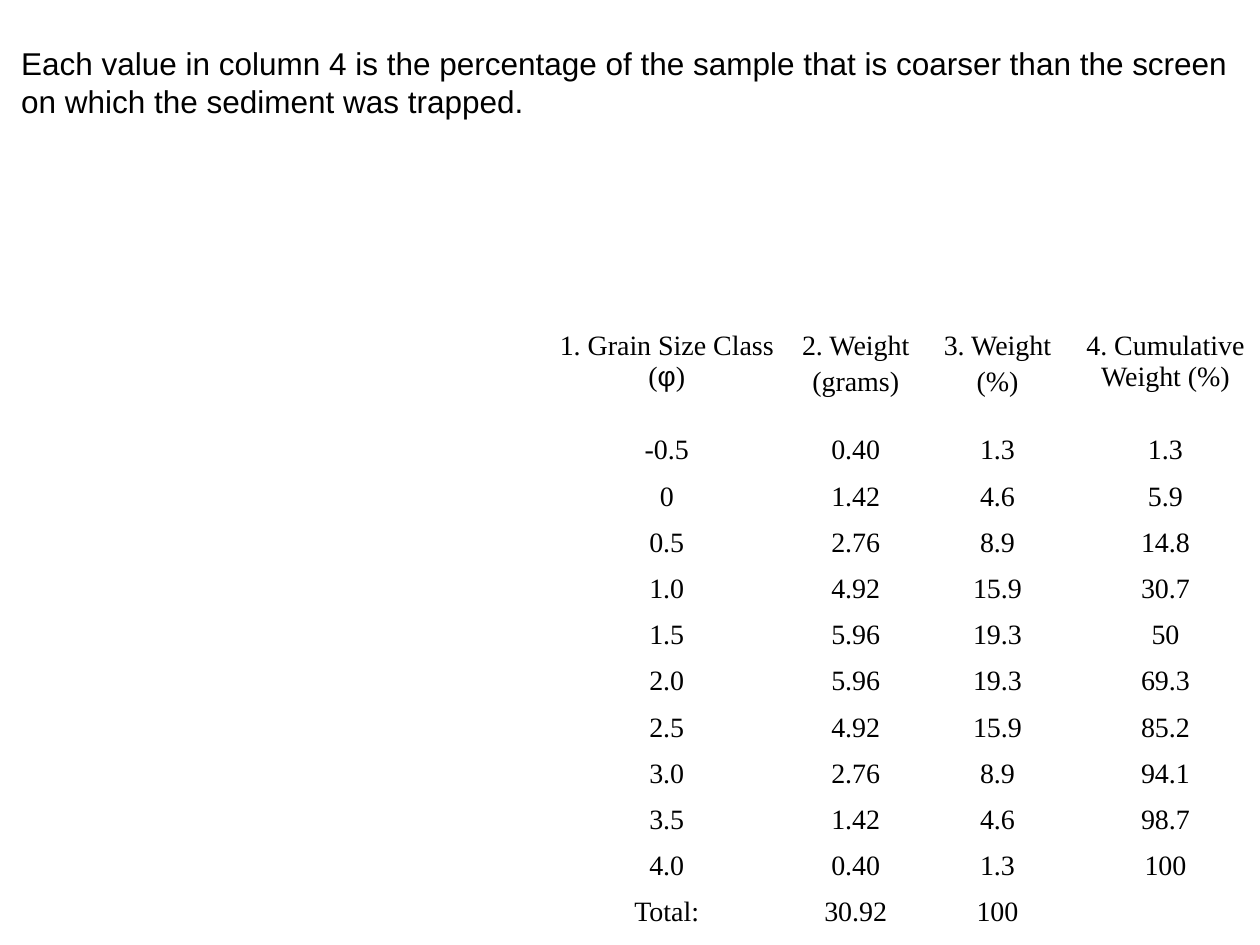
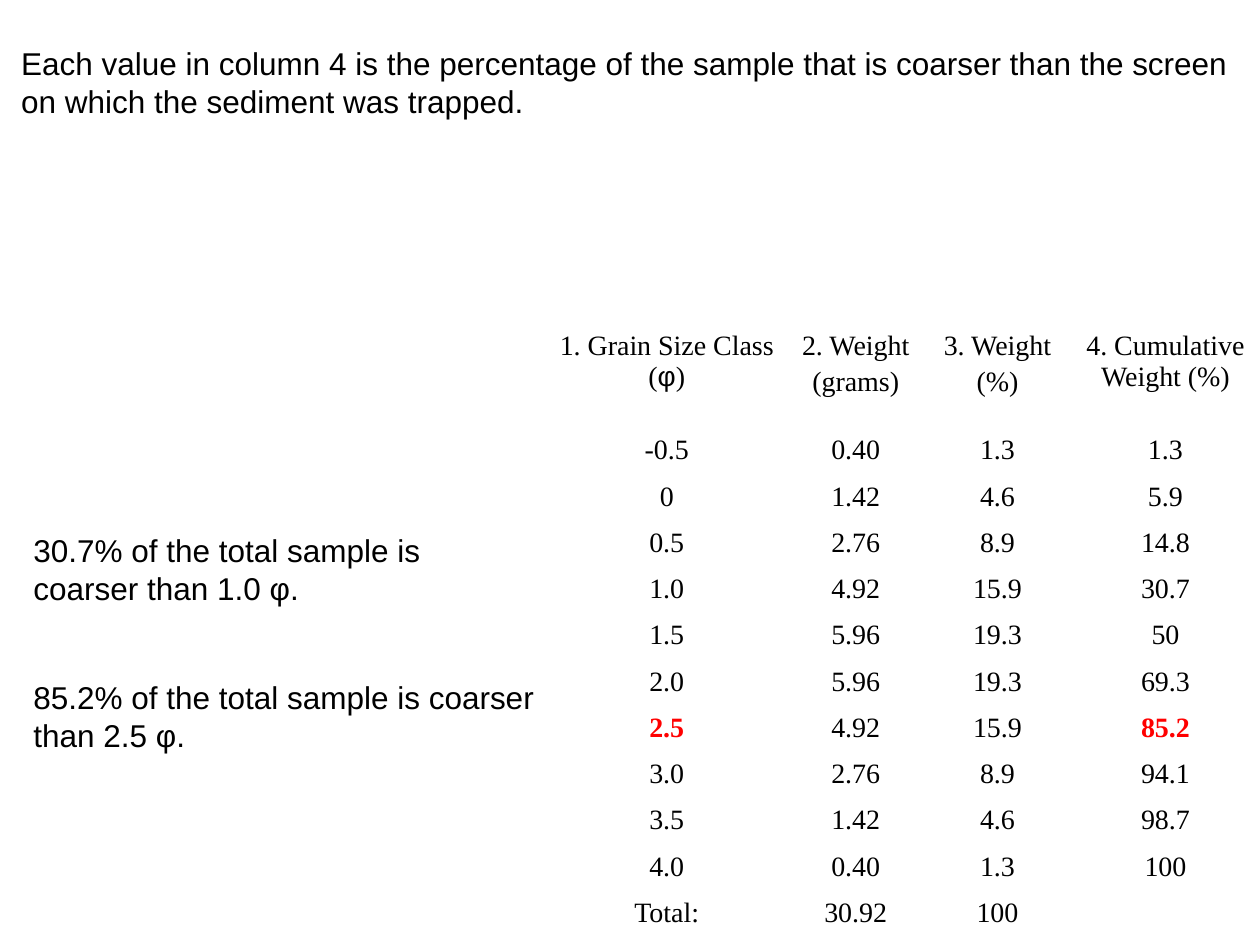
from pptx import Presentation
from pptx.dml.color import RGBColor
from pptx.enum.text import PP_ALIGN
from pptx.util import Pt

BLACK = "000000"
RED = "FF0000"
BODY_FONT = "Arial"
TABLE_FONT = "Times New Roman"
STATEMENT = ("Each value in column 4 is the percentage of the sample that is coarser "
             "than the screen on which the sediment was trapped.")
STATEMENT_BOX = (5, 21.6, 715, 65)
TABLE_BOX = (312, 185, 408, 350.4)
COLUMN_WIDTHS = (138, 78, 84, 108)
HEADER_HEIGHT = 60
HEADERS = (
    [[("1. Grain Size Class (", TABLE_FONT), ("φ", BODY_FONT), (")", TABLE_FONT)]],
    ["2. Weight", "(grams)"],
    ["3. Weight", "(%)"],
    ["4. Cumulative Weight (%)"],
)
SIEVE_ROWS = (
    ("-0.5", "0.40", "1.3", "1.3"),
    ("0", "1.42", "4.6", "5.9"),
    ("0.5", "2.76", "8.9", "14.8"),
    ("1.0", "4.92", "15.9", "30.7"),
    ("1.5", "5.96", "19.3", "50"),
    ("2.0", "5.96", "19.3", "69.3"),
    ("2.5", "4.92", "15.9", "85.2"),
    ("3.0", "2.76", "8.9", "94.1"),
    ("3.5", "1.42", "4.6", "98.7"),
    ("4.0", "0.40", "1.3", "100"),
    ("Total:", "30.92", "100", ""),
)


def rgb(value):
    return RGBColor.from_string(value)


def style_paragraph(p, font, size, color=BLACK, bold=False):
    p.font.name = font
    p.font.size = Pt(size)
    p.font.bold = bold
    p.font.color.rgb = rgb(color)


def add_text(slide, box, text):
    tf = slide.shapes.add_textbox(*map(Pt, box)).text_frame
    tf.word_wrap = True
    p = tf.paragraphs[0]
    p.text = text
    style_paragraph(p, BODY_FONT, 18)


def fill_cell(cell, lines, color=BLACK, bold=False):
    cell.fill.background()
    tf = cell.text_frame
    for i, line in enumerate(lines):
        p = tf.add_paragraph() if i else tf.paragraphs[0]
        p.alignment = PP_ALIGN.CENTER
        if i:
            p.space_before = Pt(3.2)
        style_paragraph(p, TABLE_FONT, 16, color, bold)
        if isinstance(line, str):
            p.text = line
            continue
        for text, font in line:
            r = p.add_run()
            r.text = text
            r.font.name = font


def add_sieve_table(slide, box, highlighted_class=None):
    row_count = len(SIEVE_ROWS) + 1
    table = slide.shapes.add_table(row_count, len(HEADERS), *map(Pt, box)).table
    table.first_row = False
    table.horz_banding = False
    for column, width in zip(table.columns, COLUMN_WIDTHS):
        column.width = Pt(width)
    row_height = (box[3] - HEADER_HEIGHT) / len(SIEVE_ROWS)
    for i, row in enumerate(table.rows):
        row.height = Pt(row_height if i else HEADER_HEIGHT)
    for col, lines in enumerate(HEADERS):
        fill_cell(table.cell(0, col), lines)
    for row, values in enumerate(SIEVE_ROWS, 1):
        for col, value in enumerate(values):
            marked = values[0] == highlighted_class and col in (0, 3)
            fill_cell(table.cell(row, col), [value], RED if marked else BLACK, marked)


def add_sieve_slide(prs, highlighted_class=None, readings=()):
    slide = prs.slides.add_slide(prs.slide_layouts[6])
    add_sieve_table(slide, TABLE_BOX, highlighted_class)
    add_text(slide, STATEMENT_BOX, STATEMENT)
    for box, text in readings:
        add_text(slide, box, text)


def main():
    prs = Presentation()
    prs.slide_width, prs.slide_height = Pt(720), Pt(540)
    add_sieve_slide(prs)
    add_sieve_slide(prs, "2.5", (
        ((12, 300, 295, 65), "30.7% of the total sample is coarser than 1.0 φ."),
        ((12, 384, 318, 65), "85.2% of the total sample is coarser than 2.5 φ."),
    ))
    prs.save("out.pptx")


if __name__ == "__main__":
    main()
